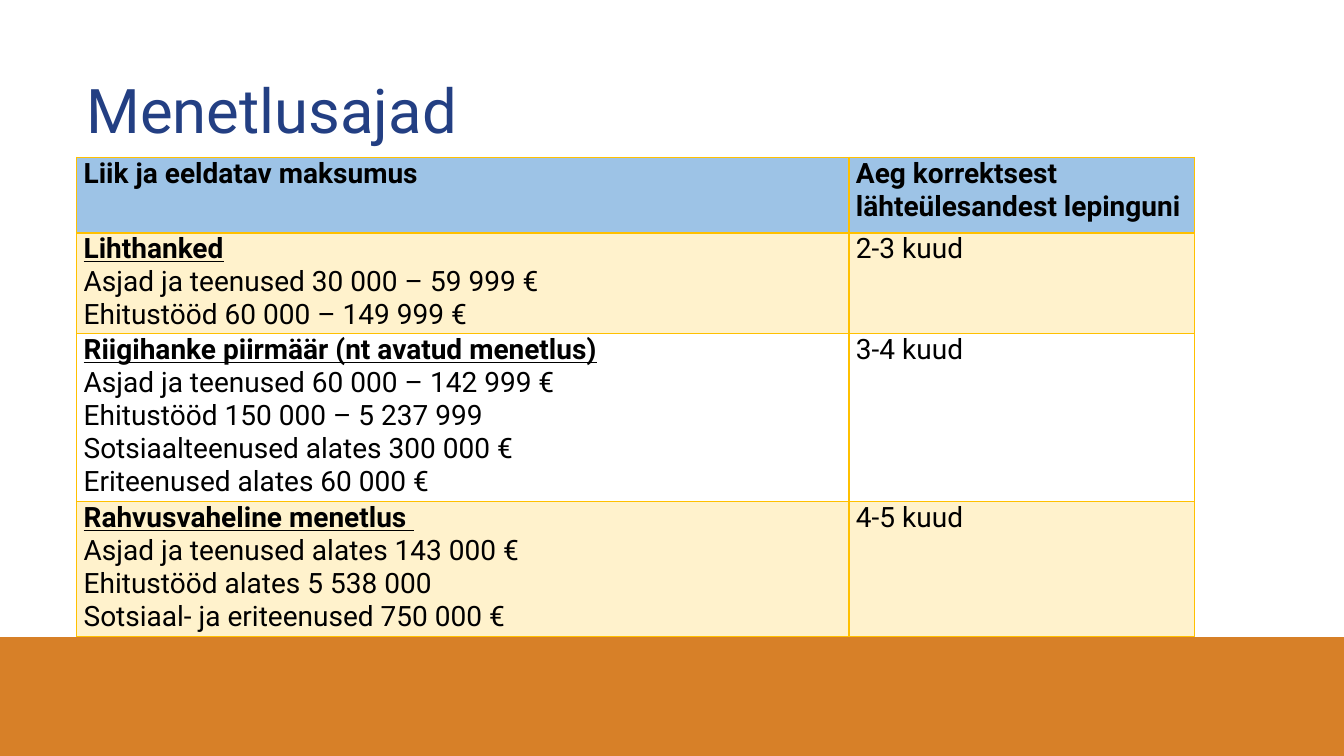
from dataclasses import dataclass

from lxml.etree import SubElement
from pptx import Presentation
from pptx.dml.color import RGBColor
from pptx.enum.shapes import MSO_SHAPE
from pptx.enum.text import MSO_ANCHOR
from pptx.oxml import parse_xml
from pptx.oxml.ns import nsdecls, qn
from pptx.util import Inches, Pt


@dataclass(frozen=True)
class Theme:
    font: str = "Roboto"
    title_size: int = 44
    table_size: int = 20
    title: str = "233F83"
    text: str = "000000"
    footer: str = "D78028"
    header: str = "9DC3E6"
    accent: str = "FFC000"
    band_opacity: int = 20


THEME = Theme()
COLUMN_WIDTHS = (7.66, 3.43)
ROW_HEIGHTS = (0.75, 0.89, 1.49, 1.19)
HEADINGS = ("Liik ja eeldatav maksumus", "Aeg korrektsest lähteülesandest lepinguni")
PROCEDURES = (
    (
        "Lihthanked",
        ("Asjad ja teenused 30 000 – 59 999 €", "Ehitustööd 60 000 – 149 999 €"),
        "2-3 kuud",
    ),
    (
        "Riigihanke piirmäär (nt avatud menetlus)",
        (
            "Asjad ja teenused 60 000 – 142 999 €",
            "Ehitustööd 150 000 – 5 237 999",
            "Sotsiaalteenused alates 300 000 €",
            "Eriteenused alates 60 000 €",
        ),
        "3-4 kuud",
    ),
    (
        "Rahvusvaheline menetlus ",
        (
            "Asjad ja teenused alates 143 000 €",
            "Ehitustööd alates 5 538 000",
            "Sotsiaal- ja eriteenused 750 000 €",
        ),
        "4-5 kuud",
    ),
)


def add_run(paragraph, text, size, color, bold=False, underline=False):
    run = paragraph.add_run()
    run.text = text
    run.font.name = THEME.font
    run.font.size = Pt(size)
    run.font.color.rgb = RGBColor.from_string(color)
    run.font.bold = bold
    run.font.underline = underline


def add_footer_band(slide):
    shape = slide.shapes.add_shape(
        MSO_SHAPE.RECTANGLE, Inches(0), Inches(6.32), Inches(13.33), Inches(1.18)
    )
    shape.shadow.inherit = False
    shape.fill.solid()
    shape.fill.fore_color.rgb = RGBColor.from_string(THEME.footer)
    shape.line.fill.background()


def add_title(slide, text):
    box = slide.shapes.add_textbox(Inches(0.76), Inches(0.4), Inches(11.81), Inches(1.45))
    frame = box.text_frame
    frame.word_wrap = True
    frame.vertical_anchor = MSO_ANCHOR.MIDDLE
    paragraph = frame.paragraphs[0]
    paragraph.line_spacing = 0.9
    add_run(paragraph, text, THEME.title_size, THEME.title)


def set_borders(cell, bottom_width):
    widths = {"lnL": 1, "lnR": 1, "lnT": 1, "lnB": bottom_width}
    properties = cell._tc.get_or_add_tcPr()
    for position, (side, width) in enumerate(widths.items()):
        border = parse_xml(
            f'<a:{side} {nsdecls("a")} w="{Pt(width)}"><a:solidFill>'
            f'<a:srgbClr val="{THEME.accent}"/></a:solidFill></a:{side}>'
        )
        properties.insert(position, border)


def fill_cell(cell, color, opacity=100):
    cell.fill.solid()
    cell.fill.fore_color.rgb = RGBColor.from_string(color)
    if opacity < 100:
        color_element = cell._tc.tcPr.find(qn("a:solidFill")).find(qn("a:srgbClr"))
        SubElement(color_element, qn("a:alpha"), val=str(opacity * 1000))


def write_cell(cell, lines, bottom_width=1):
    cell.margin_left = cell.margin_right = Inches(0.07)
    cell.margin_top = cell.margin_bottom = Inches(0)
    frame = cell.text_frame
    for index, (text, bold, underline) in enumerate(lines):
        paragraph = frame.add_paragraph() if index else frame.paragraphs[0]
        add_run(paragraph, text, THEME.table_size, THEME.text, bold, underline)
    set_borders(cell, bottom_width)


def add_procedure_table(slide):
    table = slide.shapes.add_table(
        len(ROW_HEIGHTS), len(COLUMN_WIDTHS), Inches(0.76), Inches(1.56),
        Inches(sum(COLUMN_WIDTHS)), Inches(sum(ROW_HEIGHTS)),
    ).table
    table.first_row = False
    table.horz_banding = False
    for column, width in zip(table.columns, COLUMN_WIDTHS):
        column.width = Inches(width)
    for row, height in zip(table.rows, ROW_HEIGHTS):
        row.height = Inches(height)

    for cell, heading in zip(table.rows[0].cells, HEADINGS):
        write_cell(cell, [(heading, True, False)], bottom_width=2)
        fill_cell(cell, THEME.header)

    for number, (name, limits, duration) in enumerate(PROCEDURES, 1):
        description = [(name, True, True)] + [(limit, False, False) for limit in limits]
        contents = (description, [(duration, False, False)])
        for cell, lines in zip(table.rows[number].cells, contents):
            write_cell(cell, lines)
            if number % 2:
                fill_cell(cell, THEME.accent, THEME.band_opacity)
            else:
                cell.fill.background()


def main():
    presentation = Presentation()
    presentation.slide_width = Inches(13.33)
    presentation.slide_height = Inches(7.5)
    slide = presentation.slides.add_slide(presentation.slide_layouts[6])
    add_footer_band(slide)
    add_title(slide, "Menetlusajad")
    add_procedure_table(slide)
    presentation.save("out.pptx")


if __name__ == "__main__":
    main()
